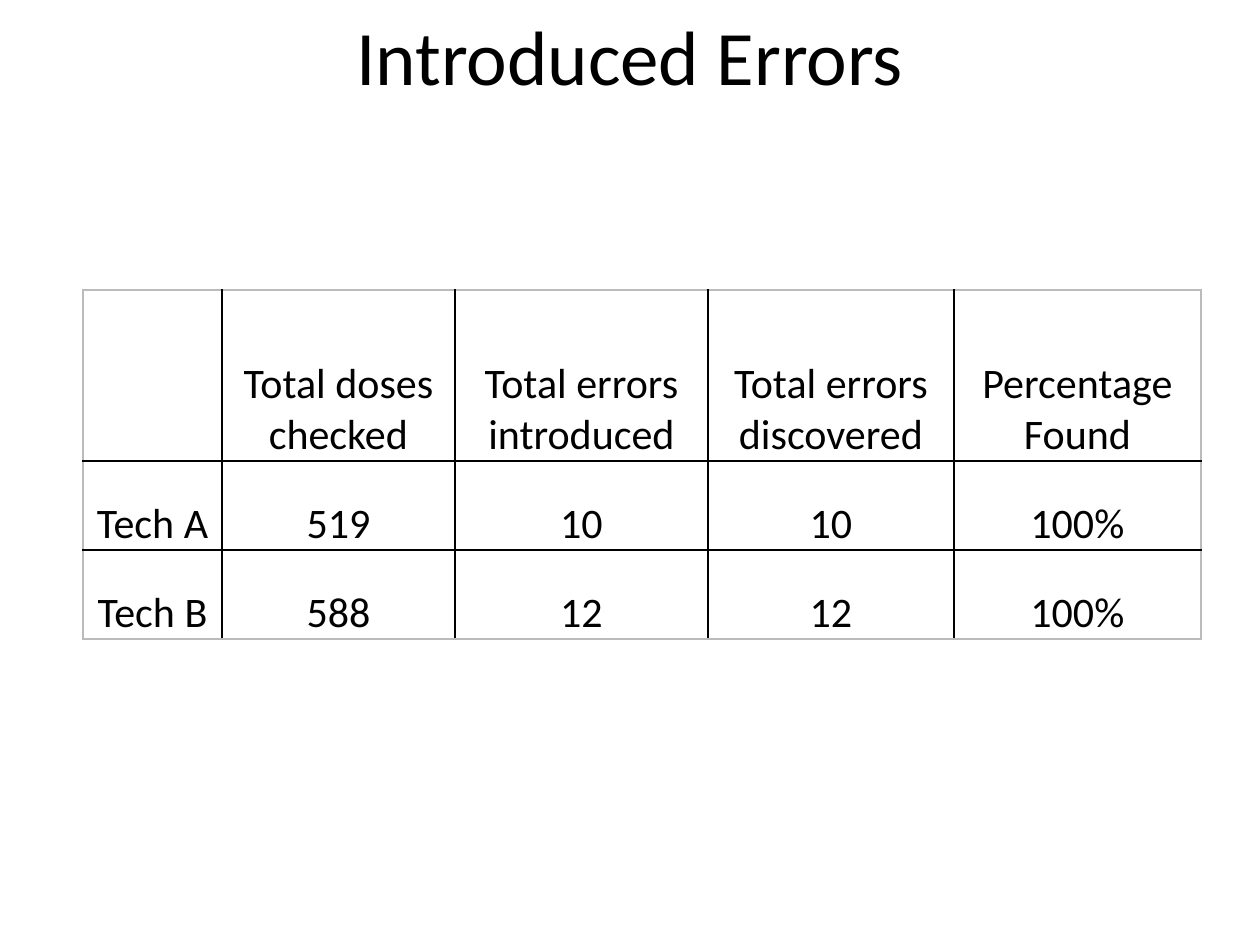
from lxml.etree import SubElement
from pptx import Presentation
from pptx.dml.color import RGBColor
from pptx.enum.text import MSO_ANCHOR, PP_ALIGN
from pptx.oxml.ns import qn
from pptx.util import Emu, Pt

COLORS = {"text": "000000", "grid": "000000", "frame": "BBBBBB"}
FONT = "Calibri"
COLUMN_WIDTHS = [139, 233, 253, 246, 247]
ROW_HEIGHTS = [171, 89, 89]
ROWS = [
    ["", "Total doses checked", "Total errors introduced",
     "Total errors discovered", "Percentage Found"],
    ["Tech A", "519", "10", "10", "100%"],
    ["Tech B", "588", "12", "12", "100%"],
]


def px(length):
    return Emu(length * 914400 // 126)


def style_paragraph(para, size):
    para.alignment = PP_ALIGN.CENTER
    para.font.name = FONT
    para.font.size = Pt(size)
    para.font.color.rgb = RGBColor.from_string(COLORS["text"])


def add_title(page, text):
    box = page.shapes.add_textbox(px(63), px(1), px(1134), px(107))
    frame = box.text_frame
    frame.word_wrap = True
    frame.vertical_anchor = MSO_ANCHOR.MIDDLE
    frame.text = text
    style_paragraph(frame.paragraphs[0], 44)


def set_borders(cell, outer_sides):
    """Draw all four sides, with the frame colour on the outer ones."""
    properties = cell._tc.get_or_add_tcPr()
    for side in "LRTB":
        line = SubElement(properties, qn(f"a:ln{side}"), w=str(Pt(1)))
        fill = SubElement(line, qn("a:solidFill"))
        color = COLORS["frame" if side in outer_sides else "grid"]
        SubElement(fill, qn("a:srgbClr"), val=color)


def fill_cell(cell, text):
    cell.text = text
    cell.fill.background()
    cell.vertical_anchor = MSO_ANCHOR.BOTTOM
    cell.margin_left = cell.margin_right = cell.margin_top = px(1)
    cell.margin_bottom = 0
    style_paragraph(cell.text_frame.paragraphs[0], 24)


def add_error_table(page):
    last_row, last_column = len(ROWS) - 1, len(COLUMN_WIDTHS) - 1
    table = page.shapes.add_table(
        len(ROWS), len(COLUMN_WIDTHS), px(83), px(290),
        px(sum(COLUMN_WIDTHS)), px(sum(ROW_HEIGHTS))).table
    table.first_row = table.horz_banding = False
    for column, width in zip(table.columns, COLUMN_WIDTHS):
        column.width = px(width)
    for row, height in zip(table.rows, ROW_HEIGHTS):
        row.height = px(height)
    for r, texts in enumerate(ROWS):
        for c, text in enumerate(texts):
            outer = {"L": c == 0, "R": c == last_column,
                     "T": r == 0, "B": r == last_row}
            cell = table.cell(r, c)
            set_borders(cell, [side for side in outer if outer[side]])
            fill_cell(cell, text)


def main():
    deck = Presentation()
    deck.slide_width, deck.slide_height = px(1260), px(945)
    page = deck.slides.add_slide(deck.slide_layouts[6])
    add_error_table(page)
    add_title(page, "Introduced Errors")
    deck.save("out.pptx")


if __name__ == "__main__":
    main()
